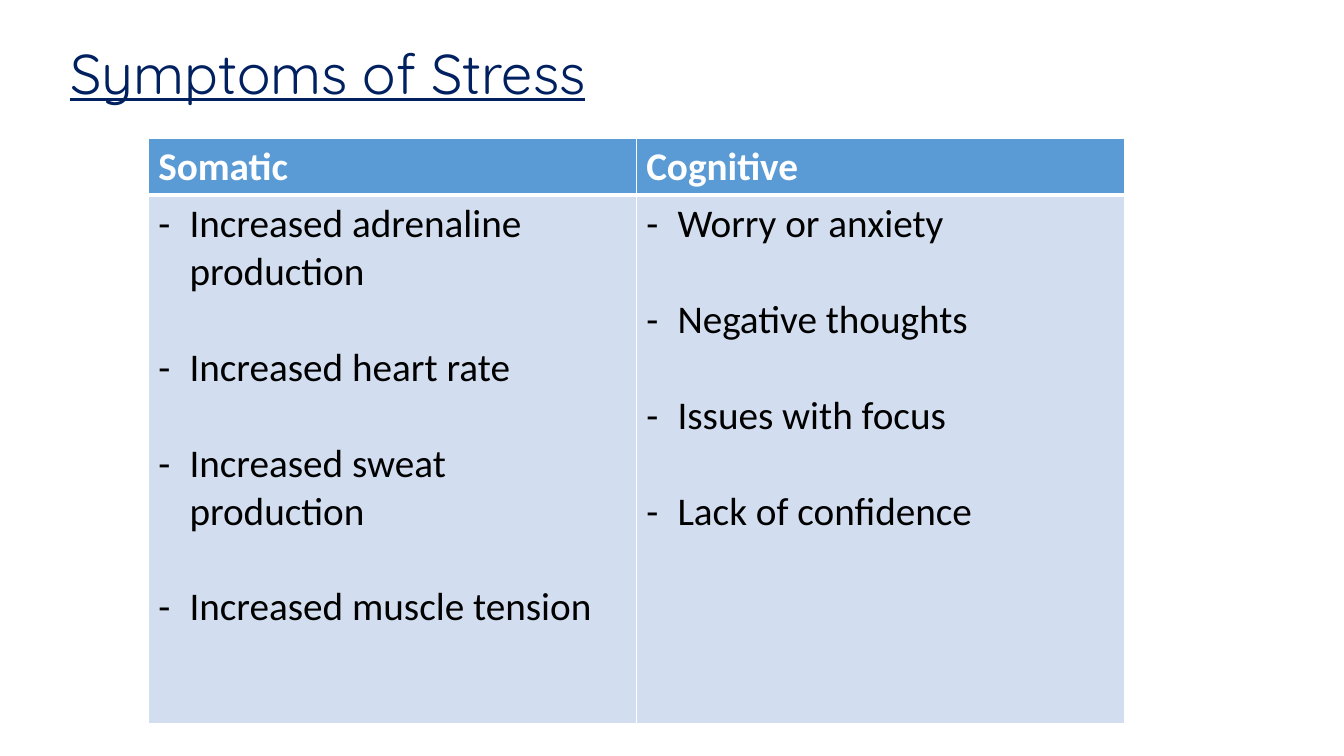
from pptx import Presentation
from pptx.dml.color import RGBColor
from pptx.enum.text import MSO_AUTO_SIZE
from pptx.oxml.ns import qn
from pptx.util import Inches, Pt
from lxml import etree

FIT = MSO_AUTO_SIZE.SHAPE_TO_FIT_TEXT
COLORS = {
    "navy": "002060",
    "blue": "5B9BD5",
    "pale": "D2DEEF",
    "white": "FFFFFF",
    "black": "000000",
}
TITLE = "Symptoms of Stress"
SYMPTOMS = {
    "Somatic": [
        "Increased adrenaline production",
        "Increased heart rate",
        "Increased sweat production",
        "Increased muscle tension",
    ],
    "Cognitive": [
        "Worry or anxiety",
        "Negative thoughts",
        "Issues with focus",
        "Lack of confidence",
    ],
}


def color(name):
    return RGBColor.from_string(COLORS[name])


def write(para, text, size=28, font="Calibri", ink="black", bold=False, line=False):
    run = para.add_run()
    run.text = text
    face = run.font
    face.size, face.name = Pt(size), font
    face.bold, face.underline = bold, line
    face.color.rgb = color(ink)


def dash(para, indent=0.31):
    """Give the paragraph a hanging dash bullet."""
    props = para._p.get_or_add_pPr()
    props.set("marL", str(Inches(indent)))
    props.set("indent", str(-Inches(indent)))
    etree.SubElement(props, qn("a:buFont"), typeface="Calibri")
    etree.SubElement(props, qn("a:buChar"), char="-")


def edge(cell, **widths):
    """Draw white cell borders, with widths in points by side: L, R, T, B."""
    props = cell._tc.get_or_add_tcPr()
    for side, width in widths.items():
        line = etree.SubElement(props, qn(f"a:ln{side}"), w=str(Pt(width)))
        fill = etree.SubElement(line, qn("a:solidFill"))
        etree.SubElement(fill, qn("a:srgbClr"), val=COLORS["white"])


class Deck:
    """Holds the text gap and the current slide."""

    gap = Pt(34.2)

    def __init__(self):
        self.prs = Presentation()
        self.prs.slide_width = Inches(13.33)
        self.prs.slide_height = Inches(7.5)
        self.slide = self.prs.slides.add_slide(self.prs.slide_layouts[6])

    def title(self, text, *box):
        frame = self.slide.shapes.add_textbox(*map(Inches, box)).text_frame
        frame.word_wrap = True
        frame.auto_size = FIT
        write(frame.paragraphs[0], text, size=40, font="Quicksand", ink="navy", line=True)

    def table(self, data, left, top, width, heights):
        box = map(Inches, (left, top, width, sum(heights)))
        grid = self.slide.shapes.add_table(len(heights), len(data), *box).table
        for row, height in zip(grid.rows, heights):
            row.height = Inches(height)
        for col, (name, items) in enumerate(data.items()):
            grid.columns[col].width = Inches(width / len(data))
            self.head(grid.cell(0, col), name)
            self.body(grid.cell(1, col), items)

    def head(self, cell, text):
        edge(cell, L=1, R=1, T=1, B=3)
        self.paint(cell, "blue")
        write(cell.text_frame.paragraphs[0], text, ink="white", bold=True)

    def body(self, cell, items):
        edge(cell, L=1, R=1, T=3, B=1)
        self.paint(cell, "pale")
        frame = cell.text_frame
        for num, item in enumerate(items):
            para = frame.add_paragraph() if num else frame.paragraphs[0]
            para.space_before = self.gap if num else Pt(0)
            dash(para)
            write(para, item)

    def paint(self, cell, name):
        cell.fill.solid()
        cell.fill.fore_color.rgb = color(name)


def main():
    deck = Deck()
    deck.title(TITLE, 0.6, 0.33, 7.24, 0.77)
    deck.table(SYMPTOMS, 1.47, 1.37, 9.68, (0.56, 5.24))
    deck.prs.save("out.pptx")


if __name__ == "__main__":
    main()
